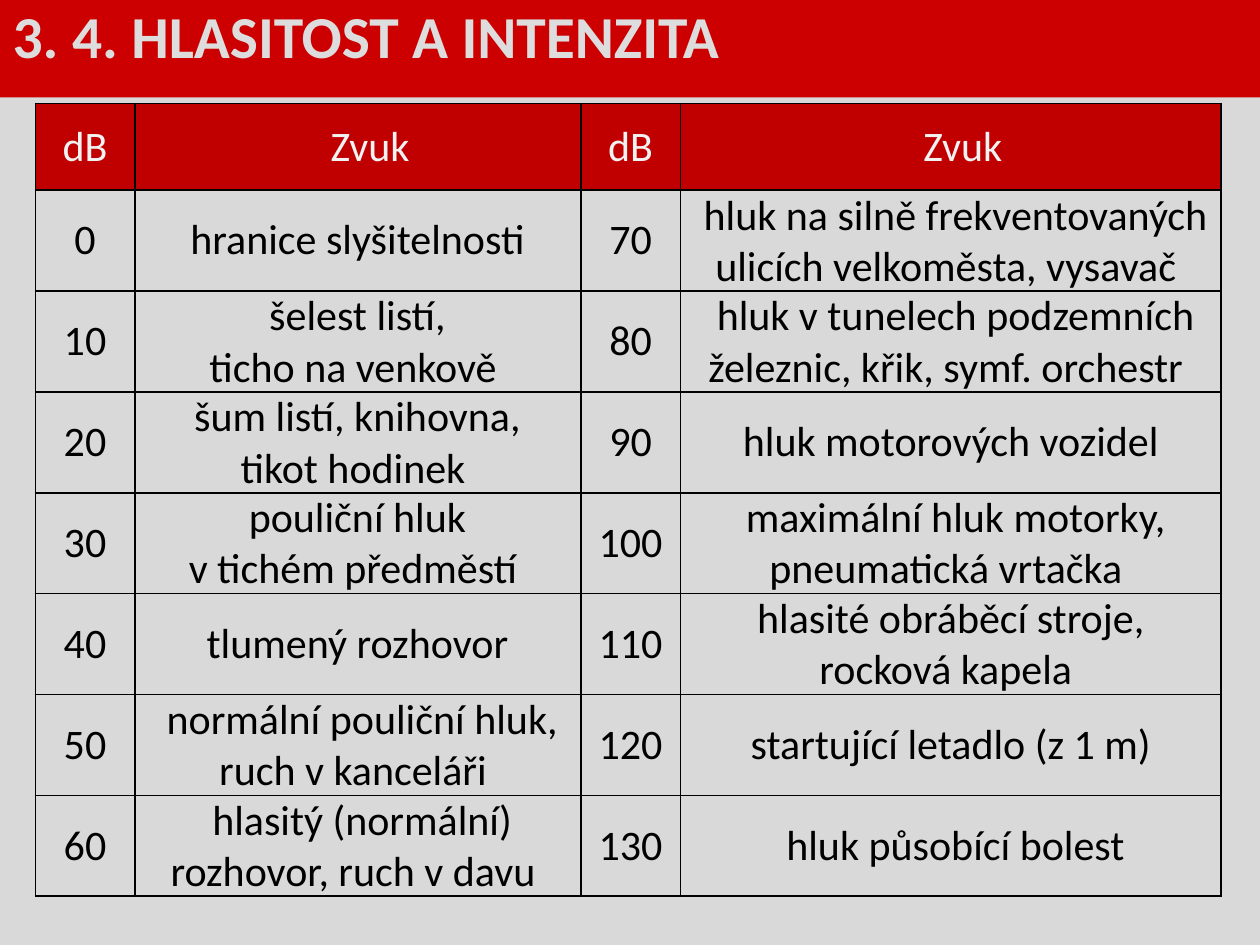
from lxml import etree
from pptx import Presentation
from pptx import util as u
from pptx.dml.color import RGBColor
from pptx.enum import text
from pptx.oxml import ns

HEADER = ("dB", "Zvuk ", "dB", "Zvuk ")
SOUNDS = [
    ("0", "hranice slyšitelnosti ",
     "70", "hluk na silně frekventovaných ulicích velkoměsta, vysavač "),
    ("10", "šelest listí, \nticho na venkově ",
     "80", "hluk v tunelech podzemních železnic, křik, symf. orchestr "),
    ("20", "šum listí, knihovna, \ntikot hodinek ",
     "90", "hluk motorových vozidel "),
    ("30", "pouliční hluk \nv tichém předměstí ",
     "100", "maximální hluk motorky, pneumatická vrtačka "),
    ("40", "tlumený rozhovor ",
     "110", "hlasité obráběcí stroje, \nrocková kapela "),
    ("50", "normální pouliční hluk, ruch v kanceláři ",
     "120", "startující letadlo (z 1 m) "),
    ("60", "hlasitý (normální) rozhovor, ruch v davu ",
     "130", "hluk působící bolest"),
]


def color(hex_code):
    return RGBColor.from_string(hex_code)


def grid(units):
    """Length on a grid of 100 columns by 75 rows over the slide."""
    return u.Inches(units / 10)


class LessonSlide:
    font = "Calibri"
    background, banner, header = "D9D9D9", "CC0000", "C00000"
    title_ink, header_ink, ink = "DDDDDD", "F2F2F2", "000000"
    title_size, table_size = 34, 24

    def __init__(self, deck):
        self.slide = deck.slides.add_slide(deck.slide_layouts[5])
        self.paint(self.slide.background.fill, self.background)

    def paint(self, fill, hex_code):
        fill.solid()
        fill.fore_color.rgb = color(hex_code)

    def add_words(self, paragraph, words, size, hex_code, bold=False):
        for number, line in enumerate(words.split("\n")):
            if number:
                paragraph.add_line_break()
            run = paragraph.add_run()
            run.text = line
            run.font.name, run.font.size = self.font, u.Pt(size)
            run.font.bold, run.font.color.rgb = bold, color(hex_code)

    def title(self, words, left, top, width, height):
        heading = self.slide.shapes.title
        heading.left, heading.top = grid(left), grid(top)
        heading.width, heading.height = grid(width), grid(height)
        self.paint(heading.fill, self.banner)
        frame = heading.text_frame
        frame.auto_size = text.MSO_AUTO_SIZE.SHAPE_TO_FIT_TEXT
        frame.vertical_anchor = text.MSO_ANCHOR.TOP
        line = frame.paragraphs[0]
        line.alignment = text.PP_ALIGN.LEFT
        self.add_words(line, words, self.title_size, self.title_ink, bold=True)

    def border(self, cell):
        properties = cell._tc.get_or_add_tcPr()
        for place, side in enumerate(("lnL", "lnR", "lnT", "lnB")):
            edge = etree.Element(ns.qn(f"a:{side}"), w=str(u.Pt(1)))
            fill = etree.SubElement(edge, ns.qn("a:solidFill"))
            etree.SubElement(fill, ns.qn("a:srgbClr"), val=self.ink)
            properties.insert(place, edge)

    def cell(self, cell, words, indent, is_header):
        cell.margin_left = cell.margin_right = 0
        cell.margin_top = cell.margin_bottom = 0
        cell.vertical_anchor = text.MSO_ANCHOR.MIDDLE
        if is_header:
            self.paint(cell.fill, self.header)
        else:
            cell.fill.background()
        self.border(cell)
        line = cell.text_frame.paragraphs[0]
        line.alignment = text.PP_ALIGN.CENTER
        if indent:
            properties = line._p.get_or_add_pPr()
            properties.set("marL", "0")
            properties.set("indent", str(grid(indent)))
        self.add_words(line, words, self.table_size,
                       self.header_ink if is_header else self.ink)

    def table(self, rows, left, top, widths, heights, header_indents, indents):
        table = self.slide.shapes.add_table(
            len(rows), len(widths), grid(left), grid(top),
            grid(sum(widths)), grid(sum(heights))).table
        table.horz_banding = False
        for column, width in zip(table.columns, widths):
            column.width = grid(width)
        for r, (row, height) in enumerate(zip(rows, heights)):
            table.rows[r].height = grid(height)
            for c, words in enumerate(row):
                indent = indents[c] if r else header_indents[c]
                self.cell(table.cell(r, c), words, indent, r == 0)


def main():
    deck = Presentation()
    deck.slide_width, deck.slide_height = grid(100), grid(75)
    loudness = LessonSlide(deck)
    loudness.title("3. 4. HLASITOST A INTENZITA", 0, -0.6, 100, 6.7)
    loudness.table([HEADER] + SOUNDS, 2.8, 8.2,
                   widths=(7.9, 35.4, 7.9, 42.9),
                   heights=[6.9] + [8] * len(SOUNDS),
                   header_indents=(0, 2.7, 0, 2.7), indents=(0, 0.7, 0, 0.8))
    deck.save("out.pptx")


if __name__ == "__main__":
    main()
